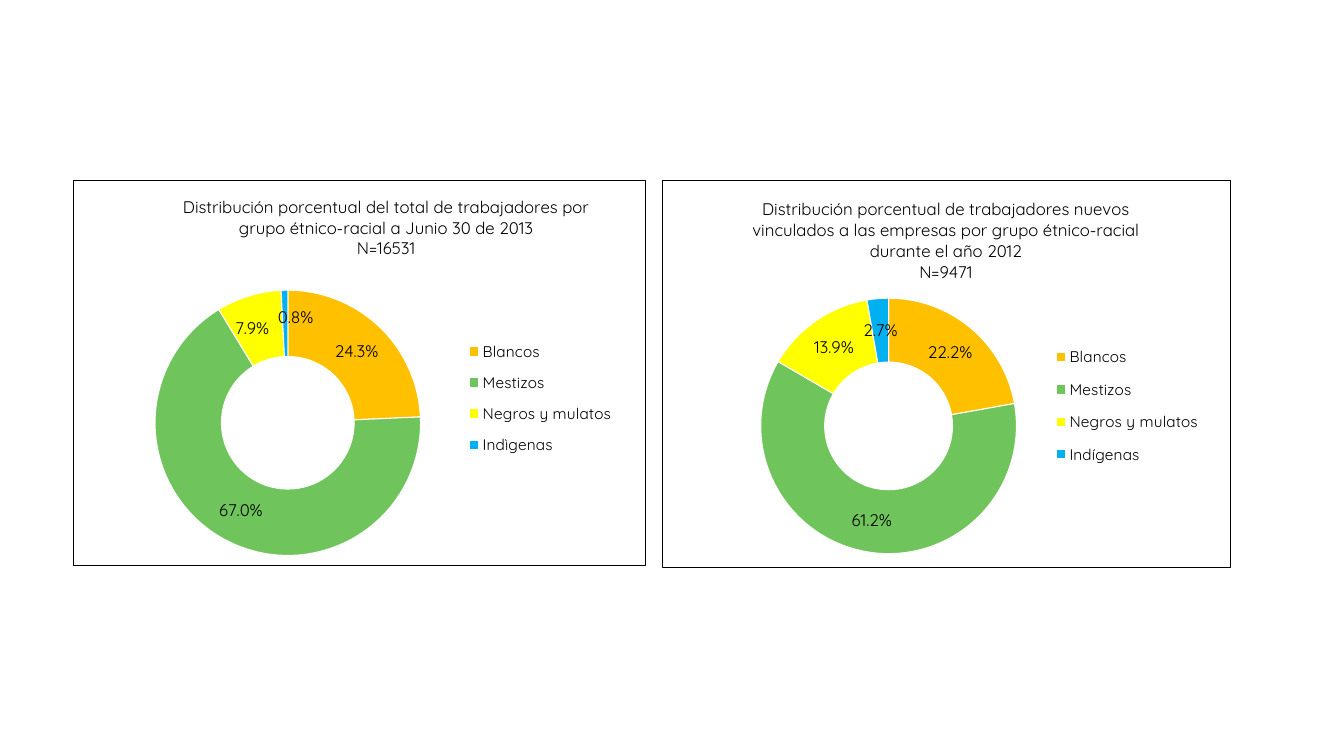
from copy import deepcopy

from lxml import etree
from pptx import Presentation
from pptx.chart.data import CategoryChartData
from pptx.dml.color import RGBColor
from pptx.enum.chart import XL_CHART_TYPE, XL_LEGEND_POSITION
from pptx.oxml import parse_xml
from pptx.oxml.ns import nsdecls, qn
from pptx.util import Pt

FONT = "Quicksand"
BLACK = RGBColor(0x00, 0x00, 0x00)
WHITE = RGBColor(0xFF, 0xFF, 0xFF)
GROUP_COLORS = (
    RGBColor(0xFF, 0xC0, 0x00),
    RGBColor(0x70, 0xC4, 0x5C),
    RGBColor(0xFF, 0xFF, 0x00),
    RGBColor(0x00, 0xB0, 0xF0),
)


def place(element, index, box, lengths, from_edge=True):
    """Lay out a chart part by x, y and perhaps w, h, in points within the box."""
    for old in element.findall(qn("c:layout")):
        element.remove(old)
    layout = parse_xml(f"<c:layout {nsdecls('c')}/>")
    manual = etree.SubElement(layout, qn("c:manualLayout"))
    settings = []
    if element.tag == qn("c:plotArea"):
        settings.append(("layoutTarget", "inner"))
    if from_edge:
        settings += [("xMode", "edge"), ("yMode", "edge")]
    width, height = box[2:]
    settings += [
        (name, length / whole)
        for name, length, whole in zip("xywh", lengths, (width, height) * 2)
    ]
    for name, value in settings:
        etree.SubElement(manual, qn(f"c:{name}")).set("val", str(value))
    element.insert(index, layout)


def add_frame(chart):
    """Draw a thin black border around the whole chart."""
    border = parse_xml(
        f"<c:spPr {nsdecls('c', 'a')}><a:noFill/><a:ln w='{Pt(0.75)}'><a:solidFill>"
        f"<a:srgbClr val='{BLACK}'/></a:solidFill></a:ln></c:spPr>"
    )
    chart.element.find(qn("c:chart")).addnext(border)


def shift_labels(chart, box, shifts):
    """Move single labels from their default places; shifts maps slice to (x, y)."""
    labels = next(chart.element.iter(qn("c:dLbls")))
    shared = [part for part in labels if part.tag != qn("c:showLeaderLines")]
    for position, (index, shift) in enumerate(sorted(shifts.items())):
        label = parse_xml(f"<c:dLbl {nsdecls('c')}><c:idx val='{index}'/></c:dLbl>")
        label.extend(deepcopy(part) for part in shared)
        place(label, 1, box, shift, from_edge=False)
        labels.insert(position, label)


def style_font(font, size):
    font.name = FONT
    font.size = Pt(size)
    font.bold = False
    font.color.rgb = BLACK


def add_ethnic_doughnut(slide, box, title, groups, shares,
                        title_at, plot_at, legend_at, label_shifts):
    data = CategoryChartData()
    data.categories = groups
    data.add_series("Series 1", shares)
    chart = slide.shapes.add_chart(
        XL_CHART_TYPE.DOUGHNUT, *(Pt(length) for length in box), data
    ).chart
    style_font(chart.font, 10)
    add_frame(chart)

    chart.has_title = True
    heading = chart.chart_title
    heading.text_frame.text = title
    for paragraph in heading.text_frame.paragraphs:
        style_font(paragraph.font, 12)
    heading.include_in_layout = False

    chart.has_legend = True
    legend = chart.legend
    legend.position = XL_LEGEND_POSITION.RIGHT
    legend.include_in_layout = False
    style_font(legend.font, 11)

    chart_part = chart.element.find(qn("c:chart"))
    place(chart_part.find(qn("c:title")), 1, box, title_at)
    place(chart_part.find(qn("c:plotArea")), 0, box, plot_at)
    place(chart_part.find(qn("c:legend")), 1, box, legend_at)

    plot = chart.plots[0]
    plot.vary_by_categories = True
    workers = plot.series[0]
    labels = workers.data_labels
    labels.show_value = False
    labels.show_percentage = True
    labels.number_format = "0.0%"
    labels.number_format_is_linked = False
    style_font(labels.font, 12)
    shift_labels(chart, box, label_shifts)
    for index, color in enumerate(GROUP_COLORS):
        slice_format = workers.points[index].format
        slice_format.fill.solid()
        slice_format.fill.fore_color.rgb = color
        slice_format.line.color.rgb = WHITE
        slice_format.line.width = Pt(0.75)


def main():
    presentation = Presentation()
    presentation.slide_width, presentation.slide_height = Pt(960), Pt(540)
    slide = presentation.slides.add_slide(presentation.slide_layouts[6])
    add_ethnic_doughnut(
        slide,
        box=(52.3, 128.9, 409.5, 275.5),
        title="Distribución porcentual del total de trabajadores por "
              "grupo étnico-racial a Junio 30 de 2013\nN=16531",
        groups=("Blancos", "Mestizos", "Negros y mulatos", "Indìgenas"),
        shares=(24.3, 67.0, 7.9, 0.8),
        title_at=(76, 7.4),
        plot_at=(58.2, 75, 190, 204.5),
        legend_at=(279, 107, 110, 97),
        label_shifts={2: (-4.5, 0), 3: (7.5, -4.5)},
    )
    add_ethnic_doughnut(
        slide,
        box=(473, 128.9, 406, 277),
        title="Distribución porcentual de trabajadores nuevos vinculados a las "
              "empresas por grupo étnico-racial durante el año 2012\nN=9471",
        groups=("Blancos", "Mestizos", "Negros y mulatos", "Indígenas"),
        shares=(22.2, 61.2, 13.9, 2.7),
        title_at=(62, 9),
        plot_at=(70.2, 84, 183, 183),
        legend_at=(277.5, 110, 110, 102),
        label_shifts={},
    )
    presentation.save("out.pptx")


if __name__ == "__main__":
    main()
